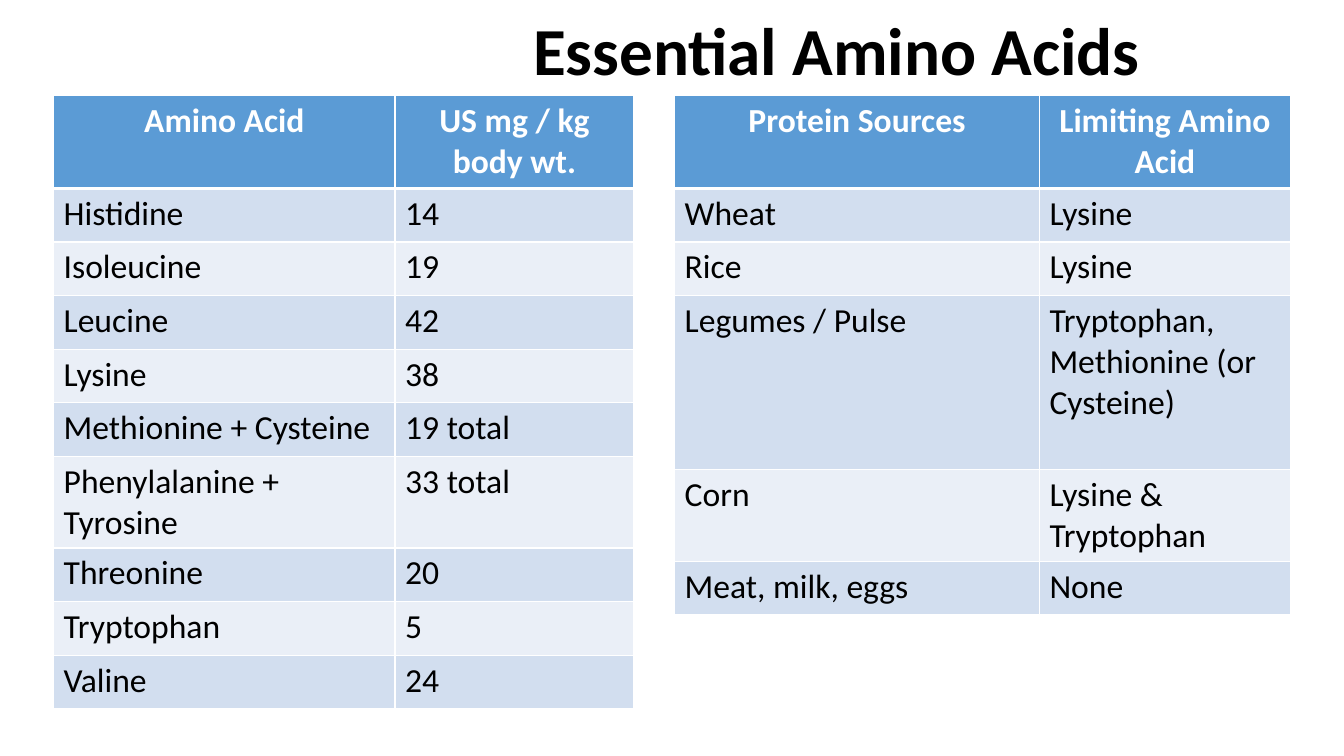
from lxml import etree
from pptx import Presentation
from pptx.dml.color import RGBColor
from pptx.enum.text import MSO_ANCHOR, PP_ALIGN
from pptx.oxml.ns import qn
from pptx.util import Pt

MIDDLE = MSO_ANCHOR.MIDDLE
LEFT, CENTER = PP_ALIGN.LEFT, PP_ALIGN.CENTER

WHITE = RGBColor(0xFF, 0xFF, 0xFF)
BLACK = RGBColor(0x00, 0x00, 0x00)
BLUE = RGBColor(0x5B, 0x9B, 0xD5)
BANDS = [RGBColor(0xD2, 0xDE, 0xEF), RGBColor(0xEA, 0xEF, 0xF7)]
FONT = "Calibri"

# Content
TITLE = "Essential Amino Acids"
NEEDS = [
    ("Amino Acid", "US mg / kg body wt."),
    ("Histidine", "14"),
    ("Isoleucine", "19"),
    ("Leucine", "42"),
    ("Lysine", "38"),
    ("Methionine + Cysteine", "19 total"),
    ("Phenylalanine + Tyrosine", "33 total"),
    ("Threonine", "20"),
    ("Tryptophan", "5"),
    ("Valine", "24"),
]
LIMITS = [
    ("Protein Sources", "Limiting Amino Acid"),
    ("Wheat", "Lysine"),
    ("Rice", "Lysine"),
    ("Legumes / Pulse", "Tryptophan, Methionine (or Cysteine)"),
    ("Corn", "Lysine & Tryptophan"),
    ("Meat, milk, eggs", "None"),
]

# Layout, in points
TOP = 68.4
HEAD, ROW = 66.2, 38.3
TALL = {"Phenylalanine + Tyrosine": 65.4, "Legumes / Pulse": 124.3, "Corn": 65.4}
TABLES = [
    (NEEDS, 38.3, (243.9, 170.6)),
    (LIMITS, 481.9, (260.6, 179.3)),
]


def add_text(para, text, size, color, bold):
    run = para.add_run()
    run.text = text
    font = run.font
    font.name, font.size, font.bold = FONT, Pt(size), bold
    font.color.rgb = color


def add_edges(cell, row):
    props = cell._tc.get_or_add_tcPr()
    widths = {
        "a:lnL": 1,
        "a:lnR": 1,
        "a:lnT": 3 if row == 1 else 1,
        "a:lnB": 3 if row == 0 else 1,
    }
    for spot, (tag, width) in enumerate(widths.items()):
        line = etree.Element(qn(tag), w=str(Pt(width)))
        fill = etree.SubElement(line, qn("a:solidFill"))
        etree.SubElement(fill, qn("a:srgbClr"), val=str(WHITE))
        props.insert(spot, line)


def add_grid(slide, rows, left, widths):
    heights = [HEAD] + [TALL.get(row[0], ROW) for row in rows[1:]]
    frame = slide.shapes.add_table(
        len(rows), len(widths), Pt(left), Pt(TOP), Pt(sum(widths)), Pt(sum(heights))
    )
    table = frame.table
    for col, width in zip(table.columns, widths):
        col.width = Pt(width)
    for r, (row, height) in enumerate(zip(rows, heights)):
        table.rows[r].height = Pt(height)
        head = r == 0
        for c, text in enumerate(row):
            cell = table.cell(r, c)
            cell.fill.solid()
            cell.fill.fore_color.rgb = BLUE if head else BANDS[(r - 1) % 2]
            add_edges(cell, r)
            para = cell.text_frame.paragraphs[0]
            para.alignment = CENTER if head else LEFT
            add_text(para, text, 24, WHITE if head else BLACK, head)


def main():
    deck = Presentation()
    deck.slide_width, deck.slide_height = Pt(960), Pt(540)
    slide = deck.slides.add_slide(deck.slide_layouts[6])

    # Title
    box = slide.shapes.add_textbox(Pt(373.7), Pt(8.6), Pt(620.6), Pt(59.8))
    box.fill.solid()
    box.fill.fore_color.rgb = WHITE
    frame = box.text_frame
    frame.word_wrap = True
    frame.vertical_anchor = MIDDLE
    para = frame.paragraphs[0]
    para.line_spacing = 0.9
    add_text(para, TITLE, 48, BLACK, True)

    # Tables
    for rows, left, widths in TABLES:
        add_grid(slide, rows, left, widths)

    deck.save("out.pptx")


if __name__ == "__main__":
    main()
